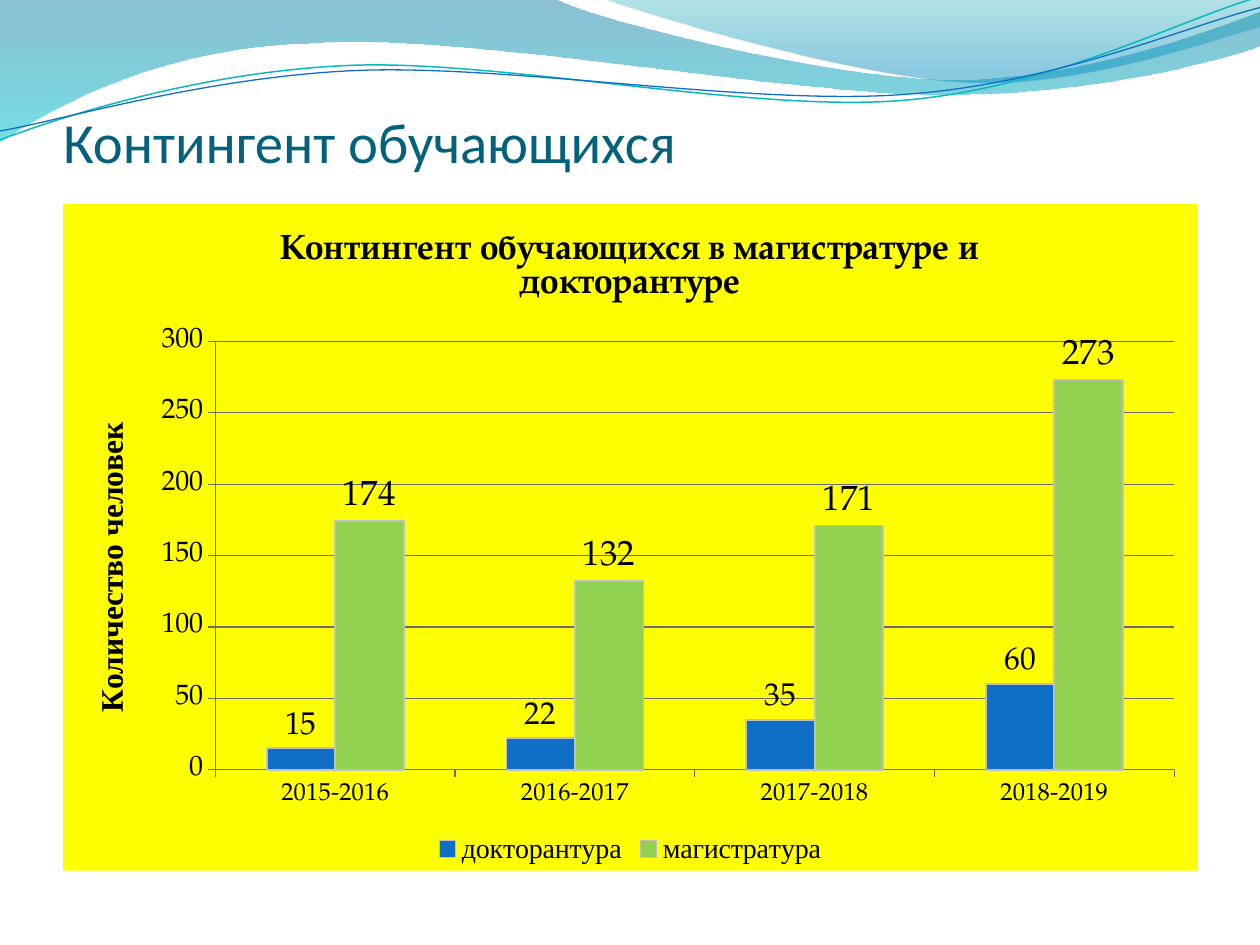
import dataclasses

import lxml.etree
import pptx
import pptx.chart.data
import pptx.dml.color
import pptx.enum.chart
import pptx.enum.text
import pptx.oxml
import pptx.oxml.ns
import pptx.util

qn = pptx.oxml.ns.qn


@dataclasses.dataclass(frozen=True)
class Theme:
    """Colours, fonts and type sizes of the deck."""
    title: str = "04617B"
    text: str = "000000"
    panel: str = "FFFF00"
    grid: str = "6B6B6B"
    bar_edge: str = "C0C0C0"
    doctoral: str = "0F6FC6"
    masters: str = "92D050"
    teal_line: str = "0AB8BF"
    heading_font: str = "Calibri"
    chart_font: str = "TeX Gyre Pagella"
    label_font: str = "Times New Roman"
    heading_size: float = 32.4
    chart_title_size: int = 20
    axis_title_size: int = 18
    legend_size: int = 16
    value_size: int = 16
    category_size: int = 14
    wide_wave: tuple = ((0, "0074A1", 45), (1, "00C6CF", 55))
    right_wave: tuple = ((0, "00A1A9", 30), (0.8, "008BBF", 45))


class SlideBuilder:
    """Draws styled elements on one slide, placed on a 10 by 7.5 grid."""
    COLUMNS, ROWS = 10, 7.5

    def __init__(self, presentation, theme):
        """Add a title-only slide."""
        self.theme = theme
        self.cell_width = presentation.slide_width / self.COLUMNS
        self.cell_height = presentation.slide_height / self.ROWS
        self.slide = presentation.slides.add_slide(presentation.slide_layouts[5])

    def place(self, column, row):
        """Turn a grid position into slide units."""
        return round(column * self.cell_width), round(row * self.cell_height)

    def style_font(self, font, size, name, color=None, bold=False):
        """Apply the type style to a font."""
        font.size, font.name, font.bold = pptx.util.Pt(size), name, bold
        font.color.rgb = pptx.dml.color.RGBColor.from_string(color or self.theme.text)

    def style_line(self, line, color, width):
        """Apply colour and width to a line."""
        line.color.rgb = pptx.dml.color.RGBColor.from_string(color)
        line.width = pptx.util.Pt(width)

    def outline(self, start, segments, closed):
        """Build a freeform from straight points and cubic segments."""
        points = [segment[index:index + 2] for segment in segments
                  for index in range(0, len(segment), 2)]
        builder = self.slide.shapes.build_freeform(*self.place(*start))
        builder.add_line_segments([self.place(*point) for point in points], close=closed)
        shape = builder.convert_to_shape()
        shape.shadow.inherit = False
        steps = iter(list(shape.element.iter(qn("a:lnTo"))))
        for segment in segments:
            first = next(steps)
            if len(segment) == 6:
                curve = lxml.etree.Element(qn("a:cubicBezTo"))
                first.addprevious(curve)
                for step in (first, next(steps), next(steps)):
                    curve.append(step[0])
                    step.getparent().remove(step)
        return shape

    def wave(self, start, segments, stops):
        """Draw a closed wave with a translucent downward gradient."""
        shape = self.outline(start, segments, True)
        shape.line.fill.background()
        shape.fill.gradient()
        shape.fill.gradient_angle = 270
        for stop, (position, color, _) in zip(shape.fill.gradient_stops, stops):
            stop.position = position
            stop.color.rgb = pptx.dml.color.RGBColor.from_string(color)
        for node, (_, _, opacity) in zip(shape.element.iter(qn("a:srgbClr")), stops):
            lxml.etree.SubElement(node, qn("a:alpha")).set("val", str(opacity * 1000))

    def ribbon(self, start, segments, color, width):
        """Draw an open curved line."""
        shape = self.outline(start, segments, False)
        shape.fill.background()
        self.style_line(shape.line, color, width)

    def title(self, text, column, row, width, height):
        """Fill the title placeholder and bring it in front of the waves."""
        shape = self.slide.shapes.title
        shape.left, shape.top = self.place(column, row)
        shape.width, shape.height = self.place(width, height)
        frame = shape.text_frame
        frame.text = text
        frame.margin_left = frame.margin_right = frame.margin_bottom = 0
        frame.vertical_anchor = pptx.enum.text.MSO_ANCHOR.BOTTOM
        paragraph = frame.paragraphs[0]
        paragraph.alignment = pptx.enum.text.PP_ALIGN.LEFT
        self.style_font(paragraph.runs[0].font, self.theme.heading_size,
                        self.theme.heading_font, self.theme.title)
        shape.element.getparent().append(shape.element)

    def panel_fill(self):
        """Return chart area properties with the panel colour."""
        return pptx.oxml.parse_xml(
            f'<c:spPr {pptx.oxml.ns.nsdecls("c", "a")}><a:solidFill>'
            f'<a:srgbClr val="{self.theme.panel}"/></a:solidFill>'
            '<a:ln><a:noFill/></a:ln></c:spPr>')

    def chart_heading(self, heading, text, size, font):
        """Write a bold chart or axis title."""
        heading.text_frame.text = text
        run = heading.text_frame.paragraphs[0].runs[0]
        self.style_font(run.font, size, font, bold=True)

    def style_axis(self, axis, size):
        """Set the type, line and ticks of an axis."""
        self.style_font(axis.tick_labels.font, size, self.theme.chart_font)
        self.style_line(axis.format.line, self.theme.grid, 0.75)
        axis.major_tick_mark = pptx.enum.chart.XL_TICK_MARK.OUTSIDE

    def column_chart(self, title, axis_title, categories, series_rows, box, plot_box):
        """Add a clustered column chart; the plot box is in cells within the chart."""
        theme = self.theme
        data = pptx.chart.data.CategoryChartData()
        data.categories = categories
        for name, values, _, _ in series_rows:
            data.add_series(name, values)
        chart = self.slide.shapes.add_chart(
            pptx.enum.chart.XL_CHART_TYPE.COLUMN_CLUSTERED,
            *self.place(*box[:2]), *self.place(*box[2:]), data).chart
        self.style_font(chart.font, 10, theme.chart_font)
        chart.has_title = True
        self.chart_heading(chart.chart_title, title, theme.chart_title_size, theme.chart_font)
        chart.has_legend = True
        chart.legend.position = pptx.enum.chart.XL_LEGEND_POSITION.BOTTOM
        chart.legend.include_in_layout = False
        self.style_font(chart.legend.font, theme.legend_size, theme.label_font)
        self.style_axis(chart.category_axis, theme.category_size)
        axis = chart.value_axis
        self.style_axis(axis, theme.value_size)
        axis.minimum_scale, axis.maximum_scale, axis.major_unit = 0, 300, 50
        self.style_line(axis.major_gridlines.format.line, theme.grid, 0.75)
        self.chart_heading(axis.axis_title, axis_title, theme.axis_title_size, theme.label_font)
        plot = chart.plots[0]
        plot.gap_width, plot.overlap, plot.vary_by_categories = 150, 0, False
        for series, (_, _, color, label_size) in zip(plot.series, series_rows):
            series.format.fill.solid()
            series.format.fill.fore_color.rgb = pptx.dml.color.RGBColor.from_string(color)
            self.style_line(series.format.line, theme.bar_edge, 1)
            labels = series.data_labels
            labels.show_value = True
            labels.position = pptx.enum.chart.XL_LABEL_POSITION.OUTSIDE_END
            self.style_font(labels.font, label_size, theme.chart_font)
        area = chart.element.find(".//" + qn("c:plotArea"))
        for layout in area.findall(qn("c:layout")):
            area.remove(layout)
        sizes = "".join(f'<c:{tag} val="{length / total}"/>'
                        for tag, length, total in zip("xywh", plot_box, box[2:] * 2))
        area.insert(0, pptx.oxml.parse_xml(
            f'<c:layout {pptx.oxml.ns.nsdecls("c")}><c:manualLayout>'
            '<c:layoutTarget val="inner"/><c:xMode val="edge"/><c:yMode val="edge"/>'
            f'{sizes}</c:manualLayout></c:layout>'))
        area.append(self.panel_fill())
        chart.element.find(qn("c:chart")).addnext(self.panel_fill())


def main():
    """Build the enrolment slide."""
    presentation = pptx.Presentation()
    presentation.slide_width = pptx.util.Inches(10)
    presentation.slide_height = pptx.util.Inches(7.5)
    theme = Theme()
    builder = SlideBuilder(presentation, theme)
    builder.wave((0, 0), [
        (4.4, -0.01), (4.76, 0.17, 6.64, 0.63, 7.58, 0.63), (8.53, 0.63, 9.58, 0.26, 10, 0.09),
        (10.01, 0.36), (9.83, 0.44, 8.7, 0.76, 7.46, 0.75), (6.22, 0.75, 3.82, 0.28, 2.57, 0.34),
        (1.29, 0.36, 0.46, 0.83, -0.01, 1.13), (0, 0)], theme.wide_wave)
    builder.wave((4.79, -0.01), [
        (5.09, 0.11, 6.82, 0.62, 7.69, 0.65), (8.56, 0.69, 9.61, 0.32, 10, 0.21), (10, 0),
        (4.79, -0.01)], theme.right_wave)
    builder.ribbon((0, 1.11), [
        (0.48, 0.93, 1.58, 0.57, 2.77, 0.52), (3.95, 0.47, 5.93, 0.89, 7.13, 0.8),
        (8.33, 0.71, 9.38, 0.15, 9.98, -0.02)], theme.teal_line, 0.85)
    builder.ribbon((0, 1.04), [
        (0.47, 0.96, 1.64, 0.61, 2.83, 0.56), (4.03, 0.51, 5.97, 0.84, 7.17, 0.75),
        (8.36, 0.67, 9.41, 0.21, 10, 0.06)], theme.doctoral, 0.75)
    builder.title("Контингент обучающихся", 0.5, 0.77, 9, 0.62)
    builder.column_chart(
        "Контингент обучающихся в магистратуре и докторантуре", "Количество человек",
        [f"{year}-{year + 1}" for year in range(2015, 2019)],
        [("докторантура", (15, 22, 35, 60), theme.doctoral, 18),
         ("магистратура", (174, 132, 171, 273), theme.masters, 20)],
        (0.5, 1.62, 9, 5.29), (1.21, 1.09, 7.61, 3.4))
    presentation.save("out.pptx")


if __name__ == "__main__":
    main()
